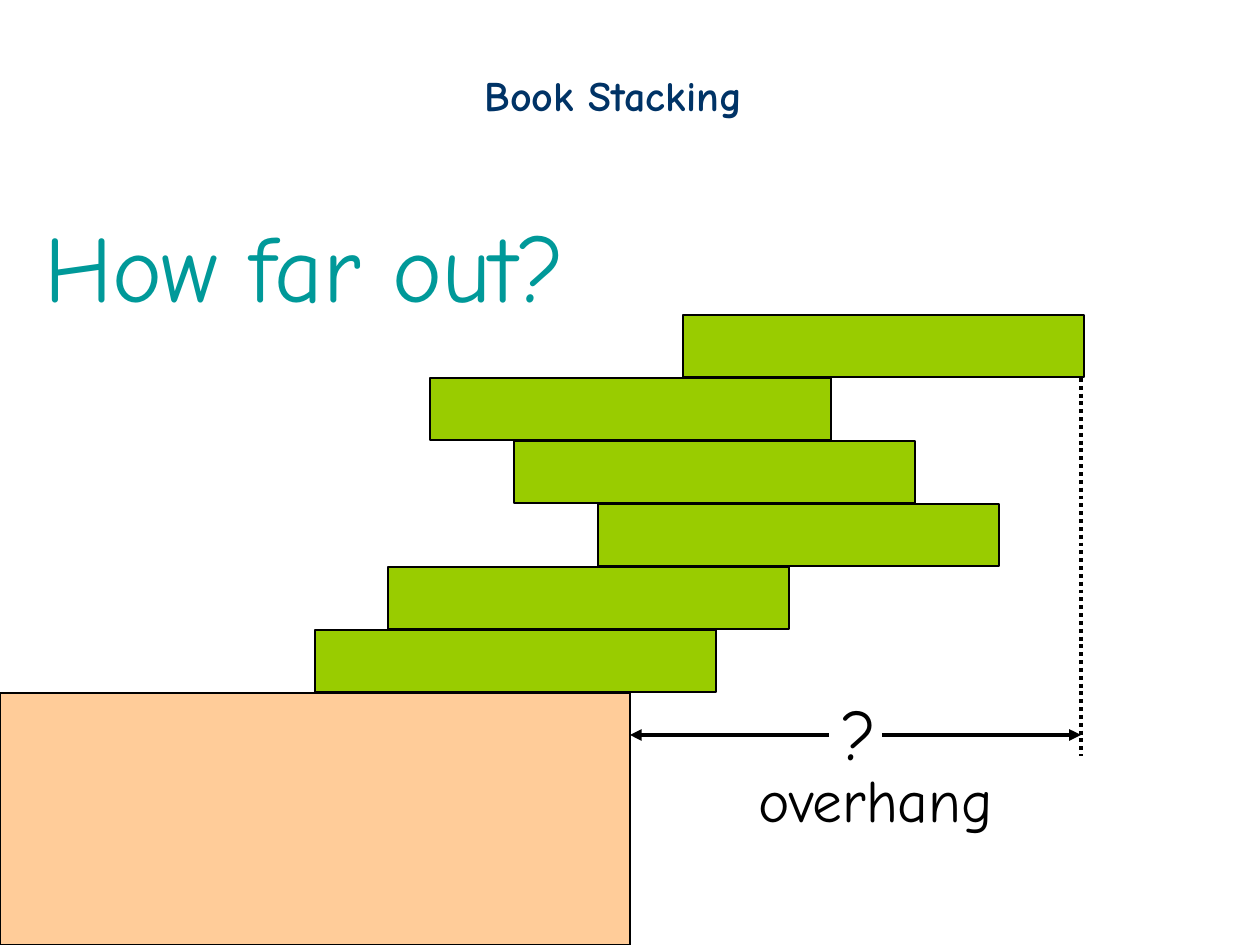
from dataclasses import dataclass

import pptx
import pptx.dml.color
import pptx.enum.dml
import pptx.enum.shapes
import pptx.oxml
import pptx.oxml.ns
import pptx.util

EMU_PER_PX = 914400 // 126
SLIDE_WIDTH, SLIDE_HEIGHT = 1260, 945
FONT = "Comic Neue"
BLACK, BOOK_GREEN, TABLE_PEACH = "000000", "99CC00", "FFCC99"

TABLE_EDGE, TABLE_TOP = 630, 693
BOOK_WIDTH, BOOK_HEIGHT, BOOK_STEP = 401, 62, 63
BOOK_LEFTS = [315, 388, 598, 514, 430, 683]  # from the table upwards
OVERHANG_END, ARROW_Y = 1081, 735


@dataclass(frozen=True)
class Label:
    text: str
    left: int
    top: int
    width: int
    height: int
    size: int
    color: str
    bold: bool = False


@dataclass(frozen=True)
class Line:
    start: tuple[int, int]
    end: tuple[int, int]
    arrow: bool = False
    dotted: bool = False


LABELS = [
    Label("Book Stacking", 472, 63, 310, 63, 24, "003366", bold=True),
    Label("How far out?", 32, 202, 604, 126, 54, "009999"),
    Label("?", 829, 684, 62, 97, 40, BLACK),
    Label("overhang", 746, 757, 275, 84, 34, BLACK),
]
LINES = [
    Line((OVERHANG_END, 378), (OVERHANG_END, 756), dotted=True),
    Line((829, ARROW_Y), (TABLE_EDGE, ARROW_Y), arrow=True),
    Line((882, ARROW_Y), (OVERHANG_END, ARROW_Y), arrow=True),
]


def px(length: int) -> pptx.util.Emu:
    return pptx.util.Emu(length * EMU_PER_PX)


def rgb(color: str) -> pptx.dml.color.RGBColor:
    return pptx.dml.color.RGBColor.from_string(color)


def add_block(slide, left: int, top: int, width: int, height: int, color: str) -> None:
    block = slide.shapes.add_shape(
        pptx.enum.shapes.MSO_SHAPE.RECTANGLE, px(left), px(top), px(width), px(height)
    )
    block.shadow.inherit = False
    block.fill.solid()
    block.fill.fore_color.rgb = rgb(color)
    block.line.color.rgb = rgb(BLACK)
    block.line.width = pptx.util.Pt(0.75)


def add_line(slide, line: Line) -> None:
    connector = slide.shapes.add_connector(
        pptx.enum.shapes.MSO_CONNECTOR.STRAIGHT,
        *(px(coordinate) for coordinate in line.start + line.end),
    )
    connector.line.color.rgb = rgb(BLACK)
    connector.line.width = pptx.util.Pt(2.25)
    if line.dotted:
        connector.line.dash_style = pptx.enum.dml.MSO_LINE.ROUND_DOT
    properties = connector._element.spPr
    if line.arrow:
        tail = pptx.oxml.parse_xml(
            f'<a:tailEnd {pptx.oxml.ns.nsdecls("a")} type="triangle"/>'
        )
        properties.find(pptx.oxml.ns.qn("a:ln")).append(tail)
    properties.append(
        pptx.oxml.parse_xml(f'<a:effectLst {pptx.oxml.ns.nsdecls("a")}/>')
    )


def add_label(slide, label: Label) -> None:
    frame = slide.shapes.add_textbox(
        px(label.left), px(label.top), px(label.width), px(label.height)
    ).text_frame
    frame.word_wrap = False
    run = frame.paragraphs[0].add_run()
    run.text = label.text
    run.font.name = FONT
    run.font.size = pptx.util.Pt(label.size)
    run.font.bold = label.bold
    run.font.color.rgb = rgb(label.color)


def main() -> None:
    presentation = pptx.Presentation()
    presentation.slide_width = px(SLIDE_WIDTH)
    presentation.slide_height = px(SLIDE_HEIGHT)
    slide = presentation.slides.add_slide(presentation.slide_layouts[6])

    add_block(slide, 0, TABLE_TOP, TABLE_EDGE, SLIDE_HEIGHT - TABLE_TOP, TABLE_PEACH)
    for level, left in enumerate(BOOK_LEFTS, start=1):
        top = TABLE_TOP - level * BOOK_STEP
        add_block(slide, left, top, BOOK_WIDTH, BOOK_HEIGHT, BOOK_GREEN)
    for line in LINES:
        add_line(slide, line)
    for label in LABELS:
        add_label(slide, label)

    presentation.save("out.pptx")


if __name__ == "__main__":
    main()
